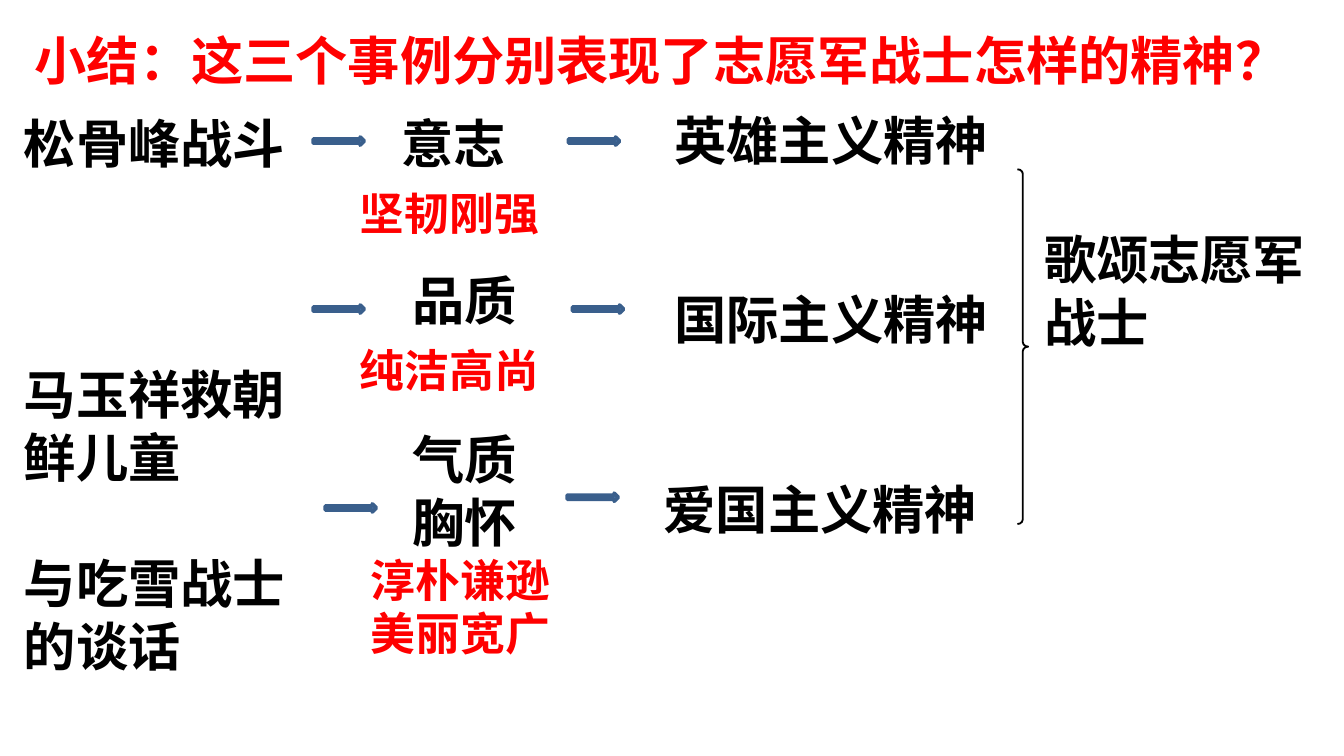
import pptx
import pptx.util
import pptx.dml.color
import pptx.enum.shapes
import pptx.enum.text
import pptx.oxml
import pptx.oxml.ns
from dataclasses import dataclass

Inches = pptx.util.Inches
Pt = pptx.util.Pt
RGB = pptx.dml.color.RGBColor
SHAPE = pptx.enum.shapes.MSO_SHAPE


@dataclass(frozen=True)
class Theme:
    font: str = "Noto Sans CJK SC"
    black: RGB = RGB(0, 0, 0)
    red: RGB = RGB(0xFF, 0, 0)
    arrow_fill: RGB = RGB(0x4F, 0x81, 0xBD)
    arrow_line: RGB = RGB(0x3A, 0x5F, 0x8C)
    large: int = 28
    small: int = 24


THEME = Theme()


def add_text(slide, text, left, top, width, height, color=THEME.black,
             size=THEME.large, spacing=None, gaps=()):
    """Bold text, one paragraph a line; gaps are points before later paragraphs."""
    sp = slide.shapes.add_textbox(*map(Inches, (left, top, width, height)))
    tf = sp.text_frame
    tf.word_wrap = True
    tf.auto_size = pptx.enum.text.MSO_AUTO_SIZE.NONE
    tf.text = text
    for p in tf.paragraphs:
        if spacing:
            p.line_spacing = spacing
        for r in p.runs:
            r.font.name = THEME.font
            r.font.size = Pt(size)
            r.font.bold = True
            r.font.color.rgb = color
            # East Asian typeface for the Chinese characters
            ea = pptx.oxml.parse_xml(
                f'<a:ea {pptx.oxml.ns.nsdecls("a")} typeface="{THEME.font}"/>')
            r.font._element.find(pptx.oxml.ns.qn("a:latin")).addnext(ea)
    for p, gap in zip(tf.paragraphs[1:], gaps):
        p.space_before = Pt(gap)


def add_arrow(slide, left, top):
    sp = slide.shapes.add_shape(SHAPE.RIGHT_ARROW, Inches(left), Inches(top),
                                Inches(0.38), Inches(0.06))
    sp.shadow.inherit = False
    sp.fill.solid()
    sp.fill.fore_color.rgb = THEME.arrow_fill
    sp.line.color.rgb = THEME.arrow_line
    sp.line.width = Pt(2)


def add_brace(slide, left, top, width, height):
    sp = slide.shapes.add_shape(SHAPE.RIGHT_BRACE,
                                *map(Inches, (left, top, width, height)))
    sp.shadow.inherit = False
    sp.fill.background()
    sp.line.color.rgb = THEME.black
    sp.line.width = Pt(1)
    sp.adjustments[0] = 0.43
    sp.adjustments[1] = 0.5


def main():
    # A 16:9 slide
    prs = pptx.Presentation()
    prs.slide_width = Inches(10)
    prs.slide_height = Inches(10 * 9 / 16)
    s = prs.slides.add_slide(prs.slide_layouts[6])

    # Title
    add_text(s, "小结：这三个事例分别表现了志愿军战士怎样的精神？",
             0.16, 0.16, 9.38, 0.57, color=THEME.red)

    # Three examples
    add_text(s, "松骨峰战斗\n马玉祥救朝鲜儿童\n与吃雪战士的谈话",
             0.08, 0.78, 2.25, 3.4, gaps=(101, 34))

    # Aspects shown by each example
    for text, left, top, width, height in (("意志", 2.89, 0.78, 1.46, 0.57),
                                           ("品质", 2.97, 1.95, 0.99, 0.57),
                                           ("气质\n胸怀", 2.97, 3.13, 1.56, 1.04)):
        add_text(s, text, left, top, width, height)

    # Answers in red
    for text, left, top, width, height in (
            ("坚韧刚强", 2.58, 1.33, 2.97, 0.5),
            ("纯洁高尚", 2.58, 2.5, 2.19, 0.5),
            ("淳朴谦逊\n美丽宽广", 2.66, 4.06, 1.64, 0.91)):
        add_text(s, text, left, top, width, height, THEME.red, THEME.small)

    # Spirits
    for text, left, top, width in (("英雄主义精神", 4.92, 0.62, 3.13),
                                   ("国际主义精神", 4.92, 1.95, 2.57),
                                   ("爱国主义精神", 4.84, 3.36, 2.57)):
        add_text(s, text, left, top, width, 0.63, spacing=1.3)

    # Arrows between the columns
    for left, top in ((2.33, 1.02), (2.33, 2.27), (2.42, 3.75),
                      (4.23, 1.02), (4.26, 2.27), (4.22, 3.67)):
        add_arrow(s, left, top)

    # Conclusion
    add_brace(s, 7.57, 1.26, 0.08, 2.64)
    add_text(s, "歌颂志愿军战士", 7.67, 1.64, 2.18, 1.51)

    prs.save("out.pptx")


if __name__ == "__main__":
    main()
